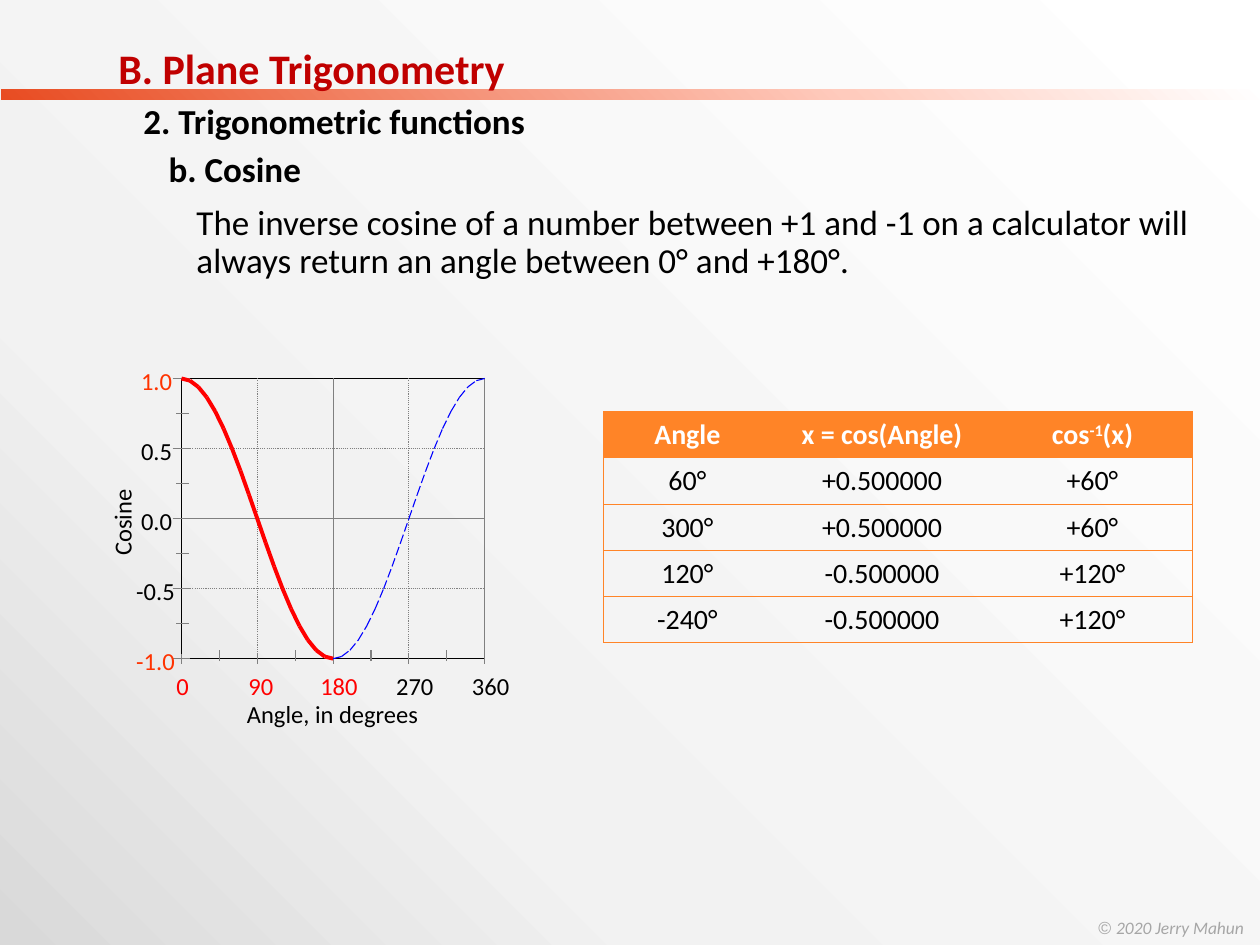
import math

import lxml.etree
import pptx
import pptx.dml.color
import pptx.enum.dml
import pptx.enum.shapes
import pptx.enum.text
import pptx.oxml.ns
import pptx.util

Pt = pptx.util.Pt
qn = pptx.oxml.ns.qn
DASH = pptx.enum.dml.MSO_LINE
ALIGN = pptx.enum.text.PP_ALIGN

COLORS = {
    "title": "C00000", "text": "000000", "frame": "000000", "grid": "808080",
    "value_mark": "FF3300", "angle_mark": "FF0000", "principal": "FF0000",
    "remainder": "0000FF", "table": "FF8427", "header": "FFFFFF", "credit": "A6A6A6",
}
BACKGROUND = [(0, "FFFFFF"), (70, "F2F2F2"), (100, "D9D9D9")]
BAND = [(0, "FFFFFF"), (33, "FFCBBD"), (100, "E84C22")]

TITLE = "B. Plane Trigonometry"
SUBHEADS = [("2. Trigonometric functions", 14.4, 0), ("b. Cosine", 28.8, 3.2)]
BODY = ("The inverse cosine of a number between +1 and -1 on a calculator will "
        "always return an angle between 0° and +180°.")
CREDIT = [("© ", "Arial", False), ("2020 Jerry Mahun", "Calibri", True)]

VALUES = [-1.0, -0.5, 0.0, 0.5, 1.0]
ANGLES = [0, 90, 180, 270, 360]
MARKED_VALUES = {-1.0, 1.0}
MARKED_ANGLES = {0, 90, 180}
DOTTED_VALUES = {-0.5, 0.5}
DOTTED_ANGLES = {90, 270}
CURVE_STEP = 10

HEADER = [[("Angle", 0)], [("x = cos(Angle)", 0)], [("cos", 0), ("-1", 30000), ("(x)", 0)]]
ROWS = [
    ("60°", "+0.500000", "+60°"),
    ("300°", "+0.500000", "+60°"),
    ("120°", "-0.500000", "+120°"),
    ("-240°", "-0.500000", "+120°"),
]
COLUMN_WIDTHS = [95.8, 126.7, 113.8]
ROW_HEIGHT = 26.4

LEFT, RIGHT, TOP, BOTTOM = 103.7, 277, 216.3, 376.4


def rgb(name):
    return pptx.dml.color.RGBColor.from_string(COLORS[name])


def angle_x(angle):
    return LEFT + (RIGHT - LEFT) * angle / 360


def value_y(value):
    return BOTTOM - (BOTTOM - TOP) * (value + 1) / 2


def curve_point(angle):
    return angle_x(angle), value_y(math.cos(math.radians(angle)))


def paint_gradient(fill, element, stops):
    fill.gradient()
    fill.gradient_angle = 225
    stop_list = next(element.iter(qn("a:gsLst")))
    for stop in list(stop_list):
        stop_list.remove(stop)
    for position, color in stops:
        stop = lxml.etree.SubElement(stop_list, qn("a:gs"), pos=str(position * 1000))
        lxml.etree.SubElement(stop, qn("a:srgbClr"), val=color)


def add_run(paragraph, text, size, color="text", font="Calibri", bold=False, italic=False):
    run = paragraph.add_run()
    run.text = text
    run.font.name, run.font.size = font, Pt(size)
    run.font.bold, run.font.italic = bold, italic
    run.font.color.rgb = rgb(color)
    return run


def add_box(slide, left, top, width, height, wrap=True):
    box = slide.shapes.add_textbox(Pt(left), Pt(top), Pt(width), Pt(height))
    box.text_frame.word_wrap = wrap
    return box


def add_label(slide, text, left, top, width, color="text"):
    box = add_box(slide, left, top, width, 17.3, False)
    frame = box.text_frame
    frame.margin_left = frame.margin_right = frame.margin_top = frame.margin_bottom = 0
    add_run(frame.paragraphs[0], text, 14, color)
    return box


def add_line(slide, x1, y1, x2, y2, color="grid", width=0.63, dash=None):
    line = slide.shapes.add_connector(
        pptx.enum.shapes.MSO_CONNECTOR.STRAIGHT, Pt(x1), Pt(y1), Pt(x2), Pt(y2))
    line.line.color.rgb = rgb(color)
    line.line.width = Pt(width)
    if dash:
        line.line.dash_style = dash
    lxml.etree.SubElement(line.element.spPr, qn("a:effectLst"))


def add_curve(slide, start, end, color, width, dash=None):
    for angle in range(start, end, CURVE_STEP):
        add_line(slide, *curve_point(angle), *curve_point(angle + CURVE_STEP), color, width, dash)


def add_plot(slide):
    for ends in [(LEFT, TOP, LEFT, BOTTOM), (LEFT, BOTTOM, RIGHT, BOTTOM), (RIGHT, TOP, LEFT, TOP)]:
        add_line(slide, *ends, color="frame")
    for value in VALUES:
        y = value_y(value)
        add_line(slide, LEFT - 5, y, LEFT + 5, y)
        if abs(value) < 1:
            add_line(slide, LEFT, y, RIGHT, y, dash=DASH.ROUND_DOT if value in DOTTED_VALUES else None)
        if value < 1:
            minor_y = value_y(value + 0.25)
            add_line(slide, LEFT - 2.9, minor_y, LEFT + 2.9, minor_y)
            add_line(slide, LEFT, minor_y, LEFT + 4.3, minor_y)
        shift = 2.8 if value < 0 else 0
        add_label(slide, f"{value:.1f}", 80.6 - shift, y - 7.4, 20.2 + 1.5 * shift,
                  "value_mark" if value in MARKED_VALUES else "text")
    for angle in ANGLES:
        x, digits = angle_x(angle), len(str(angle))
        add_line(slide, x, BOTTOM + 2.9, x, BOTTOM - 2.9)
        if angle > 0:
            add_line(slide, x, BOTTOM, x, TOP, dash=DASH.ROUND_DOT if angle in DOTTED_ANGLES else None)
        if angle < 360:
            minor_x = angle_x(angle + 45)
            add_line(slide, minor_x, BOTTOM + 1.4, minor_x, BOTTOM - 2.2)
            add_line(slide, minor_x, BOTTOM, minor_x, BOTTOM - 5)
        add_label(slide, str(angle), x - 0.7 - 2.2 * digits, 383.4, 8.3 * digits,
                  "angle_mark" if angle in MARKED_ANGLES else "text")
    add_label(slide, "Cosine", 49.7, 288.7, 40.3).rotation = 270
    add_label(slide, "Angle, in degrees", 141.1, 399.6, 102.2)
    add_curve(slide, 0, 180, "principal", 2.25)
    add_curve(slide, 180, 360, "remainder", 0.63, DASH.LONG_DASH)


def add_border(cell, side):
    line = lxml.etree.SubElement(cell._tc.get_or_add_tcPr(), qn("a:ln" + side), w=str(Pt(0.5)))
    fill = lxml.etree.SubElement(line, qn("a:solidFill"))
    lxml.etree.SubElement(fill, qn("a:srgbClr"), val=COLORS["table"])


def add_angle_table(slide):
    content = [HEADER] + [[[(text, 0)] for text in row] for row in ROWS]
    table = slide.shapes.add_table(
        len(content), len(COLUMN_WIDTHS), Pt(344.9), Pt(235.2),
        Pt(sum(COLUMN_WIDTHS)), Pt(ROW_HEIGHT * len(content))).table
    table.horz_banding = False
    next(table._tbl.iter(qn("a:tableStyleId"))).text = "{2D5ABB26-0587-4C30-8999-92F81FD0307C}"
    for column, width in zip(table.columns, COLUMN_WIDTHS):
        column.width = Pt(width)
    for row_index, row in enumerate(content):
        table.rows[row_index].height = Pt(ROW_HEIGHT)
        is_header = row_index == 0
        for column_index, runs in enumerate(row):
            cell = table.cell(row_index, column_index)
            sides = ("L" if column_index == 0 else "") + ("R" if column_index == len(row) - 1 else "")
            for side in sides + "TB":
                add_border(cell, side)
            if is_header:
                cell.fill.solid()
                cell.fill.fore_color.rgb = rgb("table")
            else:
                cell.fill.background()
            paragraph = cell.text_frame.paragraphs[0]
            paragraph.alignment = ALIGN.CENTER
            for text, baseline in runs:
                run = add_run(paragraph, text, 16, "header" if is_header else "text", bold=is_header)
                if baseline:
                    run.font._element.set("baseline", str(baseline))


def add_headings(slide):
    title = slide.shapes.title
    title.left, title.top, title.width, title.height = Pt(60.4), Pt(20.9), Pt(346.3), Pt(36)
    title.text_frame.vertical_anchor = pptx.enum.text.MSO_ANCHOR.TOP
    title.text_frame.auto_size = pptx.enum.text.MSO_AUTO_SIZE.NONE
    paragraph = title.text_frame.paragraphs[0]
    paragraph.alignment = ALIGN.LEFT
    add_run(paragraph, TITLE, 24, "title", bold=True)

    frame = add_box(slide, 60.4, 53.4, 346.3, 60).text_frame
    for index, (text, indent, space) in enumerate(SUBHEADS):
        paragraph = frame.add_paragraph() if index else frame.paragraphs[0]
        paragraph._p.get_or_add_pPr().set("marL", str(Pt(indent)))
        paragraph.space_before = Pt(space)
        add_run(paragraph, text, 20, bold=True)

    paragraph = add_box(slide, 63.4, 113.8, 643, 60).text_frame.paragraphs[0]
    paragraph._p.get_or_add_pPr().set("marL", str(Pt(41.8)))
    paragraph.line_spacing = 0.9
    add_run(paragraph, BODY, 20)


def main():
    presentation = pptx.Presentation()
    presentation.slide_width, presentation.slide_height = Pt(720), Pt(540)
    slide = presentation.slides.add_slide(presentation.slide_layouts[5])
    paint_gradient(slide.background.fill, slide.element, BACKGROUND)
    band = slide.shapes.add_shape(
        pptx.enum.shapes.MSO_SHAPE.RECTANGLE, Pt(0.7), Pt(51.1), Pt(720), Pt(5.8))
    band.shadow.inherit = False
    band.line.fill.background()
    paint_gradient(band.fill, band.element, BAND)
    slide.shapes.element.insert(2, band.element)
    credit = add_box(slide, 620.6, 520.6, 99.4, 19.4, False).text_frame.paragraphs[0]
    for text, font, italic in CREDIT:
        add_run(credit, text, 10, "credit", font, italic=italic)
    add_plot(slide)
    add_angle_table(slide)
    add_headings(slide)
    presentation.save("out.pptx")


if __name__ == "__main__":
    main()
